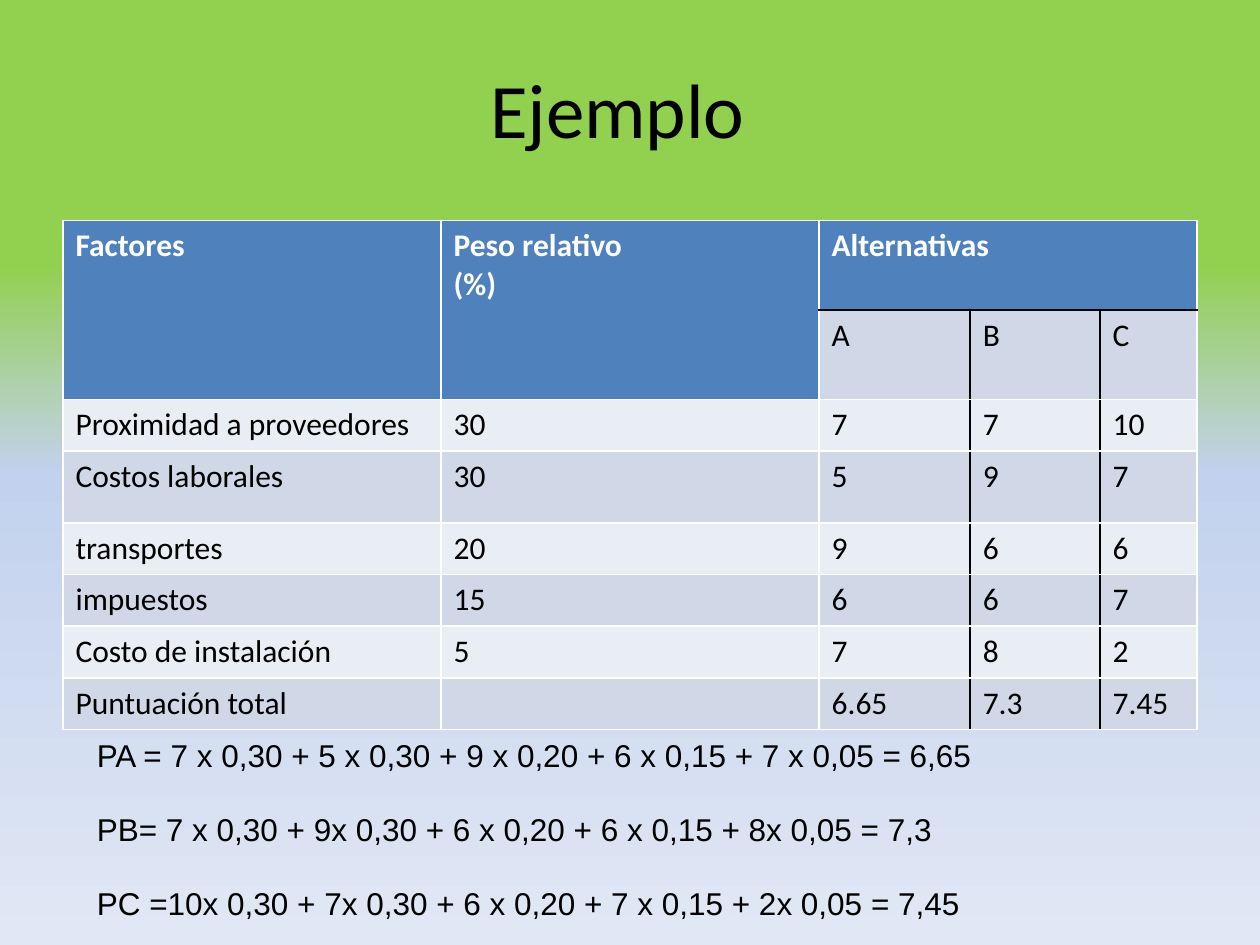
from lxml.etree import SubElement
from pptx import Presentation
from pptx.dml.color import RGBColor
from pptx.enum.text import MSO_ANCHOR, MSO_AUTO_SIZE, PP_ALIGN
from pptx.oxml import parse_xml
from pptx.oxml.ns import nsdecls, qn
from pptx.util import Inches, Pt

COLORS = {
    "green": "92D050", "sky": "C2D1ED", "pale": "E1E8F5",
    "header": "4F81BD", "band_dark": "D0D8E8", "band_light": "E9EDF4",
    "white": "FFFFFF", "black": "000000",
}


def set_font(p, name, size, color, bold=False):
    p.font.name = name
    p.font.size = Pt(size)
    p.font.bold = bold
    p.font.color.rgb = RGBColor.from_string(COLORS[color])


def set_borders(cell, sides):
    """Draw 1 pt cell edges; sides maps lnL, lnR, lnT and lnB, in that order, to colours."""
    tcPr = cell._tc.get_or_add_tcPr()
    for side, color in sides.items():
        ln = SubElement(tcPr, qn(f"a:{side}"), w=str(Pt(1)))
        fill = SubElement(ln, qn("a:solidFill"))
        SubElement(fill, qn("a:srgbClr"), val=COLORS[color])


prs = Presentation()
prs.slide_width, prs.slide_height = Inches(10), Inches(7.5)
s = prs.slides.add_slide(prs.slide_layouts[5])

# Background: vertical gradient
stops = "".join(
    f'<a:gs pos="{pos * 1000}"><a:srgbClr val="{COLORS[color]}"/></a:gs>'
    for pos, color in ((28, "green"), (50, "sky"), (100, "pale"))
)
s.background.fill.solid()
bgPr = s.background._cSld.bg.bgPr
bgPr.replace(bgPr[0], parse_xml(
    f'<a:gradFill {nsdecls("a")} rotWithShape="1"><a:gsLst>{stops}</a:gsLst>'
    '<a:lin ang="5400000" scaled="0"/></a:gradFill>'
))

# Title
title = s.shapes.title
title.left, title.top = Inches(0.47), Inches(0.23)
title.width, title.height = Inches(9), Inches(1.25)
tf = title.text_frame
tf.text = "Ejemplo "
tf.vertical_anchor = MSO_ANCHOR.MIDDLE
tf.paragraphs[0].alignment = PP_ALIGN.CENTER
set_font(tf.paragraphs[0], "Calibri", 44, "black")

# Table of weighted factors
rows = [
    ["Factores", "Peso relativo\n(%)", "Alternativas", "", ""],
    ["", "", "A", "B", "C"],
    ["Proximidad a proveedores", "30", "7", "7", "10"],
    ["Costos laborales", "30", "5", "9", "7"],
    ["transportes", "20", "9", "6", "6"],
    ["impuestos", "15", "6", "6", "7"],
    ["Costo de instalación", "5", "7", "8", "2"],
    ["Puntuación total", "", "6.65", "7.3", "7.45"],
]
col_widths = [3, 3, 1.2, 1.03, 0.77]
row_heights = [0.71, 0.71, 0.41, 0.57, 0.41, 0.41, 0.41, 0.41]
table = s.shapes.add_table(
    len(rows), len(col_widths), Inches(0.5), Inches(1.75),
    Inches(sum(col_widths)), Inches(sum(row_heights)),
).table
for column, width in zip(table.columns, col_widths):
    column.width = Inches(width)
for row, height in zip(table.rows, row_heights):
    row.height = Inches(height)

for i, row in enumerate(rows):
    for j, text in enumerate(row):
        cell = table.cell(i, j)
        is_header = i == 0 or (i == 1 and j < 2)
        cell.text = text
        for p in cell.text_frame.paragraphs:
            set_font(p, "Calibri", 18, "white" if is_header else "black", is_header)
        # Black lines separate the alternatives and underline their heading
        set_borders(cell, {
            "lnL": "black" if i > 0 and j > 2 else "white",
            "lnR": "black" if i > 0 and j in (2, 3) else "white",
            "lnT": "black" if i == 1 and j > 1 else "white",
            "lnB": "black" if i == 0 and j > 1 else "white",
        })
        band = "band_dark" if i % 2 else "band_light"
        cell.fill.solid()
        cell.fill.fore_color.rgb = RGBColor.from_string(COLORS["header" if is_header else band])

table.cell(0, 0).merge(table.cell(1, 0))
table.cell(0, 1).merge(table.cell(1, 1))
table.cell(0, 2).merge(table.cell(0, 4))

# Score calculations
formulas = [
    "PA = 7 x 0,30 + 5 x 0,30 + 9 x 0,20 + 6 x 0,15 + 7 x 0,05 = 6,65",
    "PB= 7 x 0,30 + 9x 0,30 + 6 x 0,20 + 6 x 0,15 + 8x 0,05 = 7,3",
    "PC =10x 0,30 + 7x 0,30 + 6 x 0,20 + 7 x 0,15 + 2x 0,05 = 7,45",
]
tf = s.shapes.add_textbox(Inches(0.67), Inches(5.64), Inches(8.11), Inches(1.74)).text_frame
tf.word_wrap = True
tf.auto_size = MSO_AUTO_SIZE.SHAPE_TO_FIT_TEXT
tf.text = "\n".join(formulas)
for p in tf.paragraphs:
    p.alignment = PP_ALIGN.JUSTIFY
    p.line_spacing = 1.5
    p.space_after = Pt(10)
    set_font(p, "Arial", 18, "black")

prs.save("out.pptx")
